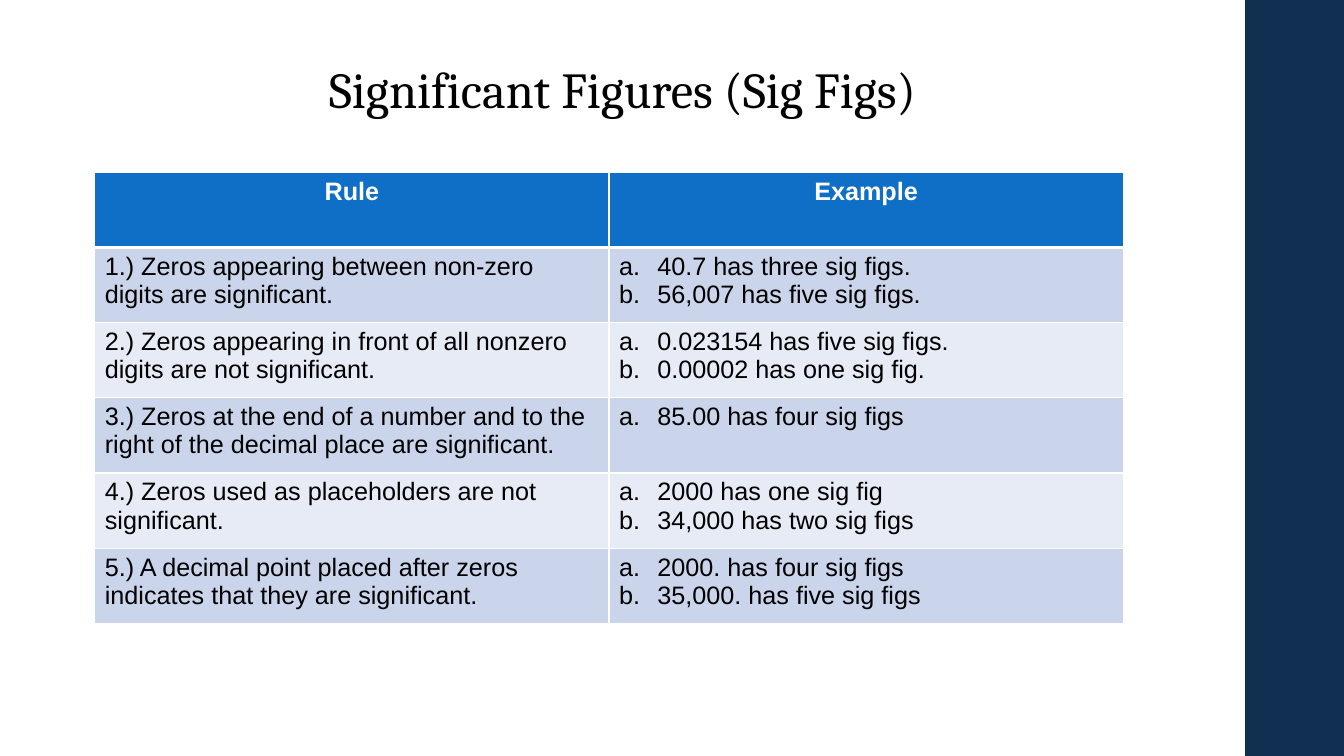
from dataclasses import dataclass

from lxml.etree import SubElement
from pptx import Presentation
from pptx.dml.color import RGBColor
from pptx.enum.shapes import MSO_SHAPE as SHAPE
from pptx.enum.text import MSO_ANCHOR as ANCHOR, PP_ALIGN as ALIGN
from pptx.oxml.ns import qn
from pptx.table import _Cell as Cell
from pptx.util import Inches, Pt

NAVY = RGBColor(0x11, 0x30, 0x51)
BLUE = RGBColor(0x0F, 0x6F, 0xC6)
BAND_DARK = RGBColor(0xCA, 0xD4, 0xEA)
BAND_LIGHT = RGBColor(0xE6, 0xEB, 0xF5)
WHITE = RGBColor(0xFF, 0xFF, 0xFF)
BLACK = RGBColor(0, 0, 0)


@dataclass
class Rule:
    text: str
    examples: list[str]


RULES = [
    Rule("1.) Zeros appearing between non-zero digits are significant.",
         ["40.7 has three sig figs.", "56,007 has five sig figs."]),
    Rule("2.) Zeros appearing in front of all nonzero digits are not significant.",
         ["0.023154 has five sig figs.", "0.00002 has one sig fig."]),
    Rule("3.) Zeros at the end of a number and to the right of the decimal place are significant.",
         ["85.00 has four sig figs"]),
    Rule("4.) Zeros used as placeholders are not significant.",
         ["2000 has one sig fig", "34,000 has two sig figs"]),
    Rule("5.) A decimal point placed after zeros indicates that they are significant.",
         ["2000. has four sig figs", "35,000. has five sig figs"]),
]


def add_text(tf, lines: list[str], *, size: float = 18, font: str = "Arial",
             color: RGBColor = BLACK, bold: bool = False,
             align: ALIGN = ALIGN.LEFT, lettered: bool = False) -> None:
    for i, line in enumerate(lines):
        p = tf.paragraphs[0] if i == 0 else tf.add_paragraph()
        p.alignment = align
        if lettered:
            pPr = p._p.get_or_add_pPr()
            pPr.set("marL", str(Inches(0.38)))
            pPr.set("indent", str(-Inches(0.38)))
            SubElement(pPr, qn("a:buFont"), typeface="+mj-lt")
            SubElement(pPr, qn("a:buAutoNum"), type="alphaLcPeriod")
        r = p.add_run()
        r.text = line
        r.font.size = Pt(size)
        r.font.name = font
        r.font.bold = bold
        r.font.color.rgb = color


def style_cell(cell: Cell, fill: RGBColor, top: float = 1, bottom: float = 1) -> None:
    tcPr = cell._tc.get_or_add_tcPr()
    for side, width in (("L", 1), ("R", 1), ("T", top), ("B", bottom)):
        ln = SubElement(tcPr, qn(f"a:ln{side}"), w=str(Pt(width)))
        color = SubElement(SubElement(ln, qn("a:solidFill")), qn("a:srgbClr"))
        color.set("val", str(WHITE))
    cell.fill.solid()
    cell.fill.fore_color.rgb = fill


def add_side_bar(slide) -> None:
    sp = slide.shapes.add_shape(SHAPE.RECTANGLE, Inches(12.35), 0, Inches(0.98), Inches(7.5))
    sp.shadow.inherit = False
    sp.fill.solid()
    sp.fill.fore_color.rgb = NAVY
    sp.line.fill.background()


def add_title(slide, text: str) -> None:
    sp = slide.shapes.title
    sp.left, sp.top, sp.width, sp.height = 0, Inches(0.52), Inches(12.35), Inches(0.71)
    sp.text_frame.vertical_anchor = ANCHOR.MIDDLE
    add_text(sp.text_frame, [text], size=36, font="Cambria", align=ALIGN.CENTER)


def add_rule_table(slide, rules: list[Rule]) -> None:
    rows = len(rules) + 1
    table = slide.shapes.add_table(rows, 2, Inches(0.94), Inches(1.71),
                                   Inches(10.2), Inches(0.746 * rows)).table
    for cell, heading in zip(table.rows[0].cells, ("Rule", "Example")):
        style_cell(cell, BLUE, bottom=3)
        add_text(cell.text_frame, [heading], color=WHITE, bold=True, align=ALIGN.CENTER)
    for i, rule in enumerate(rules, start=1):
        for cell in table.rows[i].cells:
            style_cell(cell, BAND_DARK if i % 2 else BAND_LIGHT, top=3 if i == 1 else 1)
        add_text(table.cell(i, 0).text_frame, [rule.text])
        add_text(table.cell(i, 1).text_frame, rule.examples, lettered=True)


def main() -> None:
    prs = Presentation()
    prs.slide_width, prs.slide_height = Inches(13.33), Inches(7.5)
    slide = prs.slides.add_slide(prs.slide_layouts[5])
    add_side_bar(slide)
    add_rule_table(slide, RULES)
    add_title(slide, "Significant Figures (Sig Figs)")
    prs.save("out.pptx")


if __name__ == "__main__":
    main()
